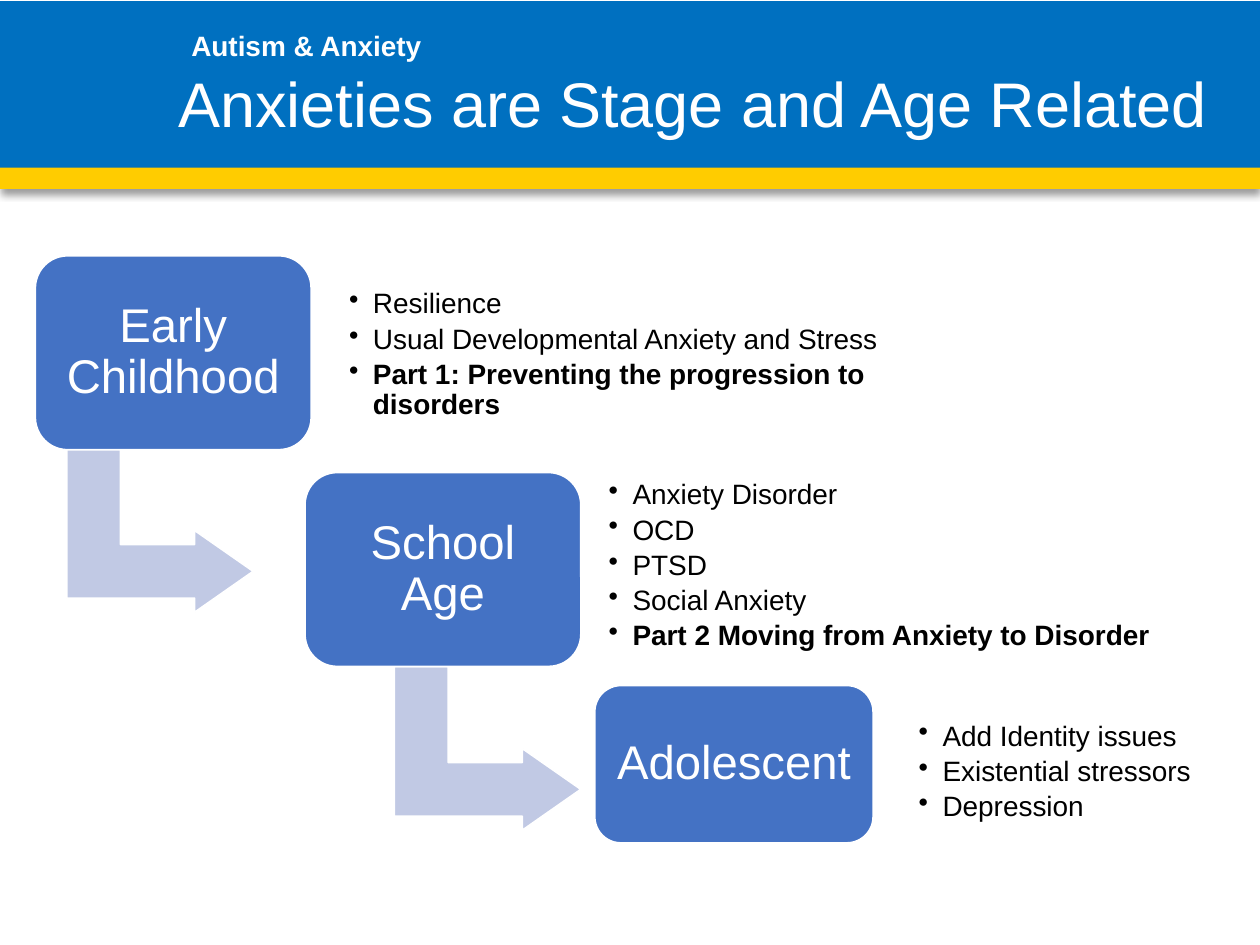
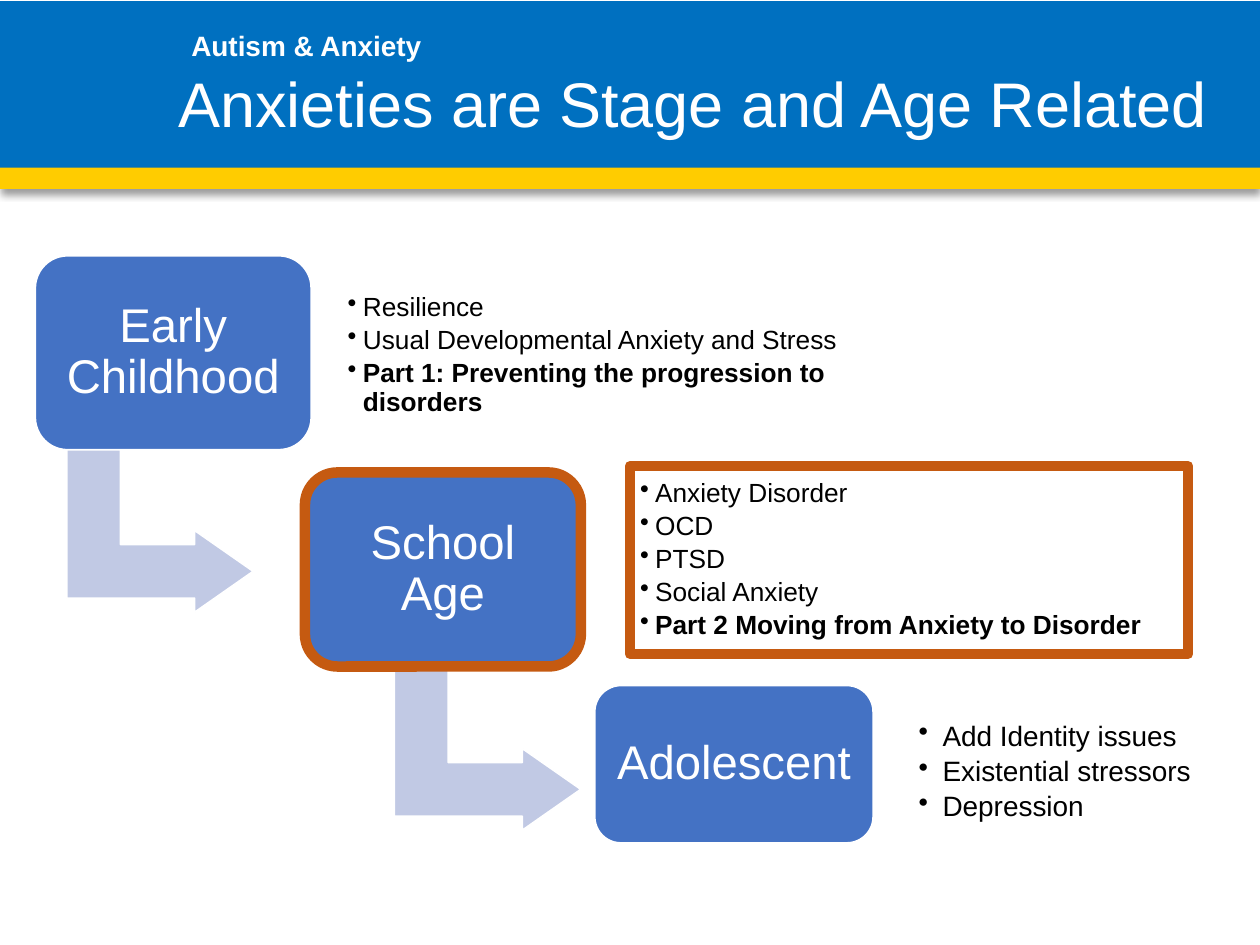
import dataclasses

import lxml.etree
import pptx
import pptx.dml.color
import pptx.enum.shapes
import pptx.enum.text
import pptx.oxml.ns
import pptx.util

Inches = pptx.util.Inches
Pt = pptx.util.Pt
qn = pptx.oxml.ns.qn
Shapes = pptx.enum.shapes.MSO_SHAPE
Align = pptx.enum.text.PP_ALIGN
Anchor = pptx.enum.text.MSO_ANCHOR


@dataclasses.dataclass(frozen=True)
class Theme:
    font: str = "Arial"
    band: str = "0070C0"
    stripe: str = "FFCC00"
    stage: str = "4472C4"
    arrow: str = "C1C9E4"
    highlight: str = "C55A11"
    light: str = "FFFFFF"
    dark: str = "000000"
    title_size: int = 36
    section_size: int = 16
    stage_size: int = 27
    line_spacing: float = 0.9


@dataclasses.dataclass(frozen=True)
class ListStyle:
    size: int
    indent: float
    inset: float


THEME = Theme()
WIDE, TIGHT = ListStyle(16, 0.19, 0.09), ListStyle(15, 0.12, 0.08)
LAST = ListStyle(16, 0.19, 0.07)

SLIDE_WIDTH, SLIDE_HEIGHT = 10, 7.5
SECTION = "Autism & Anxiety"
TITLE = "Anxieties are Stage and Age Related"

# Each stage: name, frame of its box, its points, and whether the last point is bold
STAGES = [
    ("Early Childhood", (0.28, 2.03, 2.19, 1.54),
     ["Resilience", "Usual Developmental Anxiety and Stress",
      "Part 1: Preventing the progression to disorders"], True),
    ("School Age", (2.42, 3.75, 2.19, 1.54),
     ["Anxiety Disorder", "OCD", "PTSD", "Social Anxiety",
      "Part 2 Moving from Anxiety to Disorder"], True),
    ("Adolescent", (4.72, 5.44, 2.21, 1.25),
     ["Add Identity issues", "Existential stressors", "Depression"], False),
]
FIRST_LIST = (2.68, 2.2, 4.82, 1.24)
LAST_LIST = (7.22, 5.51, 2.78, 1.24)

# Each slide: highlighted stage, then the frame and style of each stage's list
SLIDES = [
    (None, [(FIRST_LIST, WIDE), ((4.74, 3.75, 5.26, 1.49), WIDE), (LAST_LIST, LAST)]),
    ("School Age", [(FIRST_LIST, TIGHT), ((5, 3.7, 4.43, 1.49), TIGHT), (LAST_LIST, LAST)]),
]

ARROW_START, ARROW_SIZE, ARROW_STEP = (0.62, 3.47), (1.3, 1.48), (2.6, 1.73)
ARROW_SHAPE = (0.328, 0.25, 0.358)


def rgb(color):
    return pptx.dml.color.RGBColor.from_string(color)


def set_line(shape, color, width):
    shape.line.color.rgb = rgb(color)
    shape.line.width = Pt(width)


def add_block(page, kind, frame, fill):
    block = page.shapes.add_shape(kind, *map(Inches, frame))
    block.shadow.inherit = False
    block.fill.solid()
    block.fill.fore_color.rgb = rgb(fill)
    block.line.fill.background()
    return block


def add_span(para, text, size, color, bold=False):
    span = para.add_run()
    span.text = text
    span.font.name = THEME.font
    span.font.size = Pt(size)
    span.font.bold = bold
    span.font.color.rgb = rgb(color)


def set_frame(frame, inset, anchor=Anchor.MIDDLE):
    frame.word_wrap = True
    frame.auto_size = pptx.enum.text.MSO_AUTO_SIZE.NONE
    frame.vertical_anchor = anchor
    frame.margin_left = frame.margin_right = Inches(inset)
    frame.margin_top = frame.margin_bottom = Inches(inset)


def add_shadow(shape):
    """Cast a soft black shadow straight down."""
    effects = shape.element.spPr.find(qn("a:effectLst"))
    shadow = lxml.etree.SubElement(effects, qn("a:outerShdw"), blurRad=str(Pt(4)),
                                   dist=str(Pt(3)), dir="5400000", rotWithShape="0")
    color = lxml.etree.SubElement(shadow, qn("a:srgbClr"), val=THEME.dark)
    lxml.etree.SubElement(color, qn("a:alpha"), val="40000")


def move_header_to_layout(page, layout):
    """Draw the header on the page, then move it to the layout so all slides share it."""
    for holder in list(layout.placeholders):
        if holder.placeholder_format.type != pptx.enum.shapes.PP_PLACEHOLDER.TITLE:
            layout.shapes.element.remove(holder.element)
    band = add_block(page, Shapes.RECTANGLE, (0, 0.01, SLIDE_WIDTH, 1.33), THEME.band)
    stripe = add_block(page, Shapes.RECTANGLE, (0, 1.33, SLIDE_WIDTH, 0.17), THEME.stripe)
    add_shadow(stripe)
    section = page.shapes.add_textbox(*map(Inches, (1.42, 0.18, 5.06, 0.37)))
    section.text_frame.word_wrap = True
    add_span(section.text_frame.paragraphs[0], SECTION, THEME.section_size, THEME.light, True)
    for part in (band, stripe, section):
        layout.shapes.element.append(part.element)


def set_title(page):
    title = page.shapes.title
    title.left, title.top, title.width, title.height = map(Inches, (1.31, 0.25, 8.38, 0.99))
    frame = title.text_frame
    set_frame(frame, 0.05)
    frame.margin_left = frame.margin_right = Inches(0.1)
    frame.margin_top = Inches(0.26)
    para = frame.paragraphs[0]
    para.alignment = Align.CENTER
    para.line_spacing = THEME.line_spacing
    add_span(para, TITLE, THEME.title_size, THEME.light)


def add_arrow(page, index):
    corner = [start + index * step for start, step in zip(ARROW_START, ARROW_STEP)]
    arrow = add_block(page, Shapes.BENT_UP_ARROW, (*corner, *ARROW_SIZE), THEME.arrow)
    arrow.rotation = 90
    for number, value in enumerate(ARROW_SHAPE):
        arrow.adjustments[number] = value
    set_line(arrow, THEME.light, 1)


def add_stage(page, name, frame, highlighted):
    box = add_block(page, Shapes.ROUNDED_RECTANGLE, frame, THEME.stage)
    if highlighted:
        set_line(box, THEME.highlight, 6)
    else:
        set_line(box, THEME.light, 1)
    set_frame(box.text_frame, 0.1)
    para = box.text_frame.paragraphs[0]
    para.alignment = Align.CENTER
    para.line_spacing = THEME.line_spacing
    add_span(para, name, THEME.stage_size, THEME.light)


def add_points(page, points, frame, style, bold_last, highlighted):
    box = page.shapes.add_textbox(*map(Inches, frame))
    if highlighted:
        set_line(box, THEME.highlight, 6)
    set_frame(box.text_frame, style.inset)
    for index, point in enumerate(points):
        para = box.text_frame.add_paragraph() if index else box.text_frame.paragraphs[0]
        props = para._p.get_or_add_pPr()
        props.set("marL", str(Inches(style.indent)))
        props.set("indent", str(-Inches(style.indent)))
        lxml.etree.SubElement(props, qn("a:buChar"), char="•")
        para.line_spacing = THEME.line_spacing
        para.space_after = Pt(0.18 * style.size)
        is_last = index == len(points) - 1
        add_span(para, point, style.size, THEME.dark, bold_last and is_last)


def main():
    deck = pptx.Presentation()
    deck.slide_width, deck.slide_height = Inches(SLIDE_WIDTH), Inches(SLIDE_HEIGHT)
    layout = deck.slide_layouts.get_by_name("Title Only")
    for number, (highlight, lists) in enumerate(SLIDES):
        page = deck.slides.add_slide(layout)
        if number == 0:
            move_header_to_layout(page, layout)
        set_title(page)
        for index, (stage, (list_frame, style)) in enumerate(zip(STAGES, lists)):
            name, frame, points, bold_last = stage
            highlighted = name == highlight
            if index < len(STAGES) - 1:
                add_arrow(page, index)
            add_stage(page, name, frame, highlighted)
            add_points(page, points, list_frame, style, bold_last, highlighted)
    deck.save("out.pptx")


if __name__ == "__main__":
    main()
